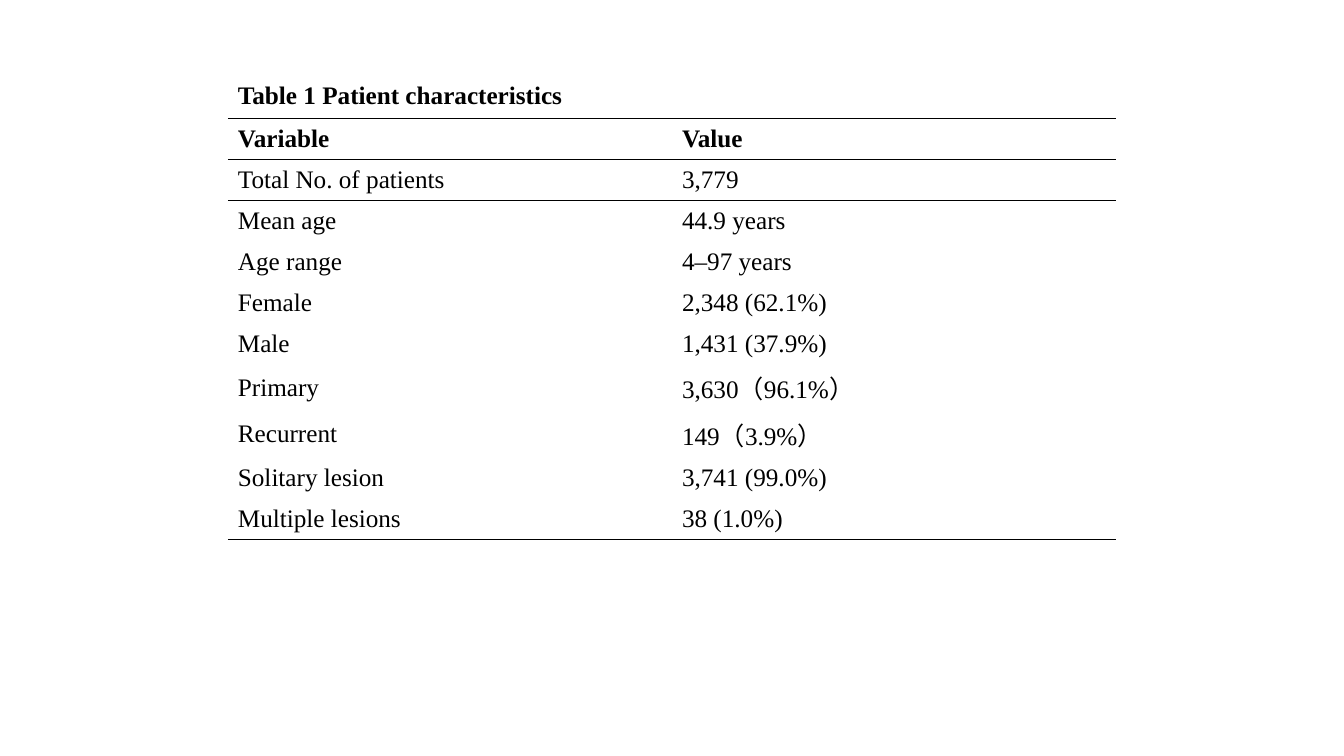
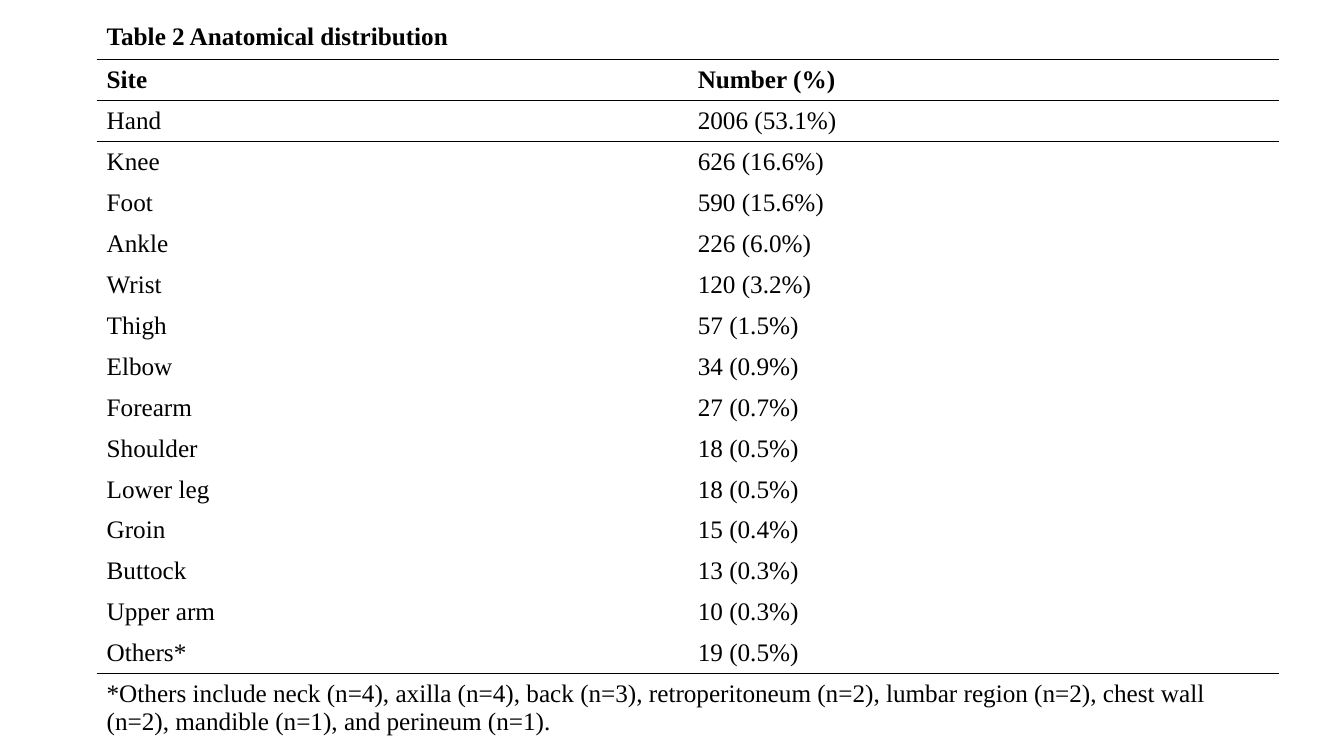
from lxml import etree
from pptx import Presentation
from pptx.dml.color import RGBColor
from pptx.enum.text import MSO_ANCHOR
from pptx.oxml.ns import qn
from pptx.util import Pt

EMU_PER_PX = 9525
PAGE_WIDTH, PAGE_HEIGHT = 1280, 720
CAPTION_HEIGHT, ROW_HEIGHT, NOTE_HEIGHT = 44, 39, 65
FONT_NAME, FONT_SIZE, RULE_WIDTH = "Times New Roman", 18, 1
BLACK = RGBColor(0x00, 0x00, 0x00)
MIDDLE = MSO_ANCHOR.MIDDLE
BLANK_LAYOUT = 6

PATIENTS = [
    ("Variable", "Value"),
    ("Total No. of patients", "3,779"),
    ("Mean age", "44.9 years"),
    ("Age range", "4–97 years"),
    ("Female", "2,348 (62.1%)"),
    ("Male", "1,431 (37.9%)"),
    ("Primary", "3,630（96.1%）"),
    ("Recurrent", "149（3.9%）"),
    ("Solitary lesion", "3,741 (99.0%)"),
    ("Multiple lesions", "38 (1.0%)"),
]
SITES = [
    ("Site", "Number (%)"),
    ("Hand", "2006 (53.1%)"),
    ("Knee", "626 (16.6%)"),
    ("Foot", "590 (15.6%)"),
    ("Ankle", "226 (6.0%)"),
    ("Wrist", "120 (3.2%)"),
    ("Thigh", "57 (1.5%)"),
    ("Elbow", "34 (0.9%)"),
    ("Forearm", "27 (0.7%)"),
    ("Shoulder", "18 (0.5%)"),
    ("Lower leg", "18 (0.5%)"),
    ("Groin", "15 (0.4%)"),
    ("Buttock", "13 (0.3%)"),
    ("Upper arm", "10 (0.3%)"),
    ("Others*", "19 (0.5%)"),
]
SITES_NOTE = (
    "*Others include neck (n=4), axilla (n=4), back (n=3), "
    "retroperitoneum (n=2), lumbar region (n=2), chest wall (n=2), "
    "mandible (n=1), and perineum (n=1)."
)


def px(length):
    """Turn whole pixels into EMU."""
    return length * EMU_PER_PX


def write_text(cell, text, bold=False, size=FONT_SIZE, color=BLACK):
    """Write one formatted run into a table cell."""
    span = cell.text_frame.paragraphs[0].add_run()
    span.text = text
    span.font.name = FONT_NAME
    span.font.size = Pt(size)
    span.font.bold = bold
    span.font.color.rgb = color


def set_borders(cell, top, bottom):
    """Rule the chosen horizontal edges of a cell and clear the others."""
    properties = cell._tc.get_or_add_tcPr()
    edges = {"lnL": False, "lnR": False, "lnT": top, "lnB": bottom}
    for position, (edge, ruled) in enumerate(edges.items()):
        line = etree.Element(qn(f"a:{edge}"))
        if ruled:
            line.set("w", str(Pt(RULE_WIDTH)))
            fill = etree.SubElement(line, qn("a:solidFill"))
            etree.SubElement(fill, qn("a:srgbClr"), val=str(BLACK))
        else:
            etree.SubElement(line, qn("a:noFill"))
        properties.insert(position, line)


def add_ruled_table(page, caption, records, left, top, column_width, note=None):
    """Add a captioned table with horizontal rules and an optional note."""
    rows = [(caption,), *records]
    heights = [CAPTION_HEIGHT] + [ROW_HEIGHT] * len(records)
    if note:
        rows.append((note,))
        heights.append(NOTE_HEIGHT)
    ruled_rows = {0, 1, 2, len(records)}

    table = page.shapes.add_table(
        len(rows), 2, px(left), px(top), px(2 * column_width), px(sum(heights))
    ).table
    table.first_row = False
    table.horz_banding = False
    for index, (texts, height) in enumerate(zip(rows, heights)):
        row = table.rows[index]
        row.height = px(height)
        for cell in row.cells:
            cell.fill.background()
            cell.vertical_anchor = MIDDLE
            set_borders(cell, index - 1 in ruled_rows, index in ruled_rows)
        if len(texts) == 1:
            table.cell(index, 0).merge(table.cell(index, 1))
        for cell, text in zip(row.cells, texts):
            write_text(cell, text, bold=index < 2)


def main():
    """Build and save the deck."""
    deck = Presentation()
    deck.slide_width, deck.slide_height = px(PAGE_WIDTH), px(PAGE_HEIGHT)
    layout = deck.slide_layouts[BLANK_LAYOUT]

    add_ruled_table(
        deck.slides.add_slide(layout), "Table 1 Patient characteristics",
        PATIENTS, left=217, top=69, column_width=423,
    )
    add_ruled_table(
        deck.slides.add_slide(layout), "Table 2 Anatomical distribution",
        SITES, left=92, top=13, column_width=563, note=SITES_NOTE,
    )
    deck.save("out.pptx")


if __name__ == "__main__":
    main()
